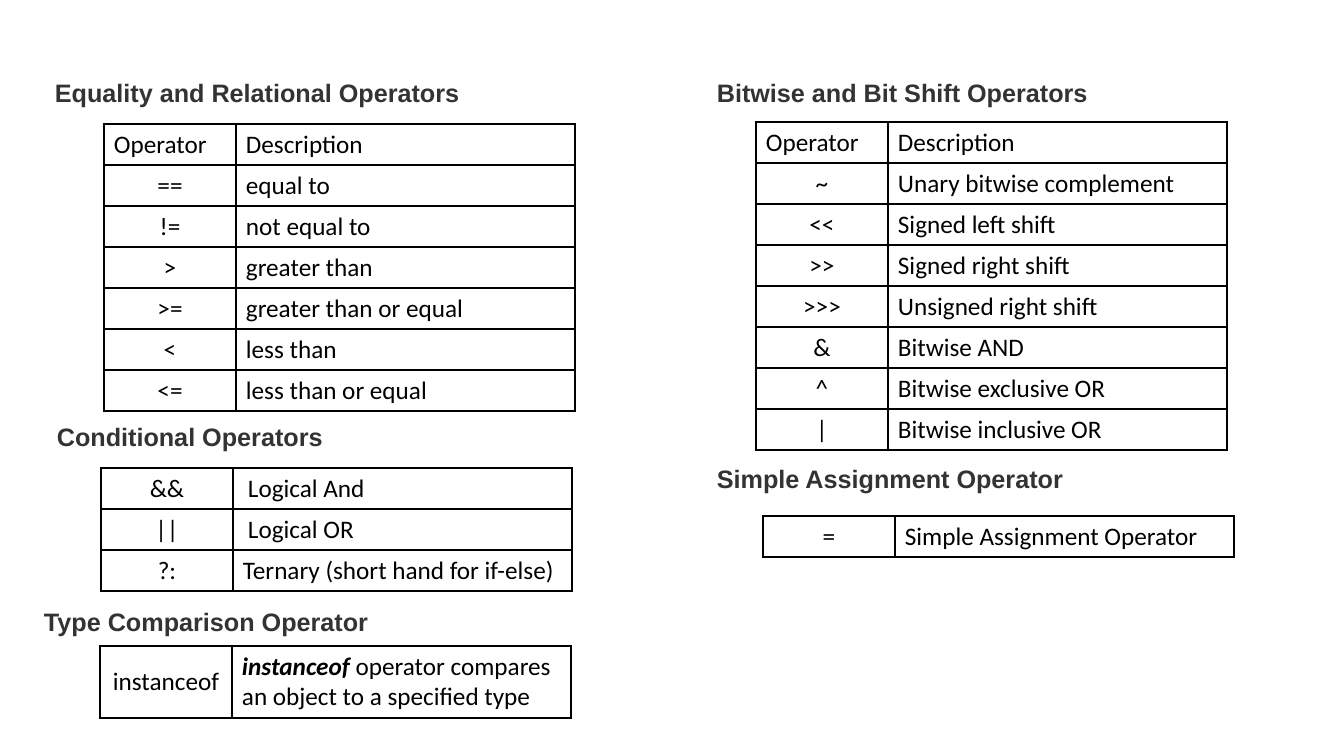
from lxml import etree
from pptx import Presentation
from pptx import util as u
from pptx.dml.color import RGBColor
from pptx.enum import text
from pptx.oxml import ns

PX = 914400 / 100.8
BLACK = RGBColor(0x00, 0x00, 0x00)
HEADING_GRAY = RGBColor(0x33, 0x33, 0x33)
COLUMN_WIDTHS = (132, 339)
ROW_HEIGHT = 41
CELL_MARGIN = 10
HEADER = ("Operator", "Description")


def px(length):
    return u.Emu(round(length * PX))


def add_run(paragraph, words, font_name, color, bold=False, italic=False):
    run = paragraph.add_run()
    run.text = words
    run.font.name = font_name
    run.font.size = u.Pt(18)
    run.font.bold = bold
    run.font.italic = italic
    run.font.color.rgb = color


headings = [
    ("Equality and Relational Operators", 45, 72, 471),
    ("Conditional Operators", 47, 416, 307),
    ("Type Comparison Operator", 34, 601, 366),
    ("Bitwise and Bit Shift Operators", 707, 72, 457),
    ("Simple Assignment Operator", 707, 458, 457),
]

tables = [
    (104, 124, ROW_HEIGHT, 0, [
        HEADER,
        ("==", "equal to"),
        ("!=", "not equal to"),
        (">", "greater than"),
        (">=", "greater than or equal"),
        ("<", "less than"),
        ("<=", "less than or equal"),
    ]),
    (101, 468, ROW_HEIGHT, 5, [
        ("&&", "Logical And"),
        ("||", "Logical OR"),
        ("?:", "Ternary (short hand for if-else)"),
    ]),
    (100, 646, 72, 0, [
        ("instanceof", "instanceof operator compares an object to a specified type"),
    ]),
    (756, 122, ROW_HEIGHT, 0, [
        HEADER,
        ("~", "Unary bitwise complement"),
        ("<<", "Signed left shift"),
        (">>", "Signed right shift"),
        (">>>", "Unsigned right shift"),
        ("&", "Bitwise AND"),
        ("^", "Bitwise exclusive OR"),
        ("|", "Bitwise inclusive OR"),
    ]),
    (763, 516, ROW_HEIGHT, 0, [("=", "Simple Assignment Operator")]),
]

presentation = Presentation()
presentation.slide_width = px(1344)
presentation.slide_height = px(756)
slide = presentation.slides.add_slide(presentation.slide_layouts[6])

for title, left, top, width in headings:
    frame = slide.shapes.add_textbox(px(left), px(top), px(width), px(40)).text_frame
    frame.word_wrap = True
    frame.auto_size = text.MSO_AUTO_SIZE.SHAPE_TO_FIT_TEXT
    add_run(frame.paragraphs[0], title, "Arial", HEADING_GRAY, bold=True)

for left, top, row_height, logical_indent, rows in tables:
    table = slide.shapes.add_table(
        len(rows), 2, px(left), px(top), px(sum(COLUMN_WIDTHS)), px(row_height * len(rows))
    ).table
    table.first_row = False
    table.horz_banding = False
    for column, width in zip(table.columns, COLUMN_WIDTHS):
        column.width = px(width)
    for row_index, row in enumerate(rows):
        table.rows[row_index].height = px(row_height)
        for column_index, words in enumerate(row):
            cell = table.cell(row_index, column_index)
            cell.vertical_anchor = text.MSO_ANCHOR.MIDDLE
            indent = logical_indent if words.startswith("Logical") else 0
            cell.margin_left = px(CELL_MARGIN + indent)
            cell.margin_right = px(CELL_MARGIN)
            properties = cell._tc.get_or_add_tcPr()
            for side in ("a:lnL", "a:lnR", "a:lnT", "a:lnB"):
                line = etree.SubElement(properties, ns.qn(side), w=str(u.Pt(1)))
                fill = etree.SubElement(line, ns.qn("a:solidFill"))
                etree.SubElement(fill, ns.qn("a:srgbClr"), val=str(BLACK))
            cell.fill.background()
            paragraph = cell.text_frame.paragraphs[0]
            if column_index == 0 and row is not HEADER:
                paragraph.alignment = text.PP_ALIGN.CENTER
            keyword = "instanceof" if words.startswith("instanceof ") else ""
            if keyword:
                add_run(paragraph, keyword, "Calibri", BLACK, bold=True, italic=True)
            add_run(paragraph, words.removeprefix(keyword), "Calibri", BLACK)

presentation.save("out.pptx")
